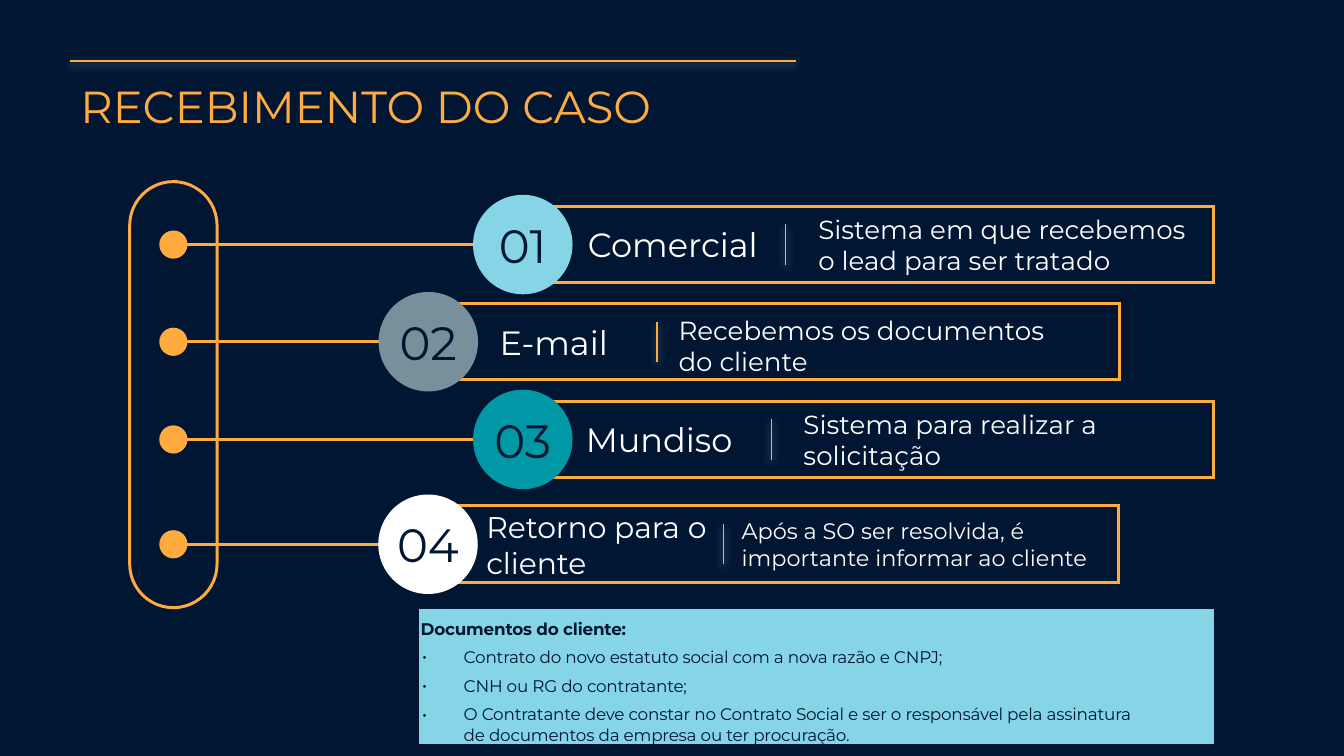
"""Build the case intake slide: four numbered steps and a list of client documents."""
from lxml import etree
from pptx import Presentation
from pptx import util as u
from pptx.dml.color import RGBColor as Rgb
from pptx.enum import shapes, text
from pptx.oxml import ns

theme = {
    "font": "Montserrat",
    "navy": "001633", "gold": "FFAB40", "white": "FFFFFF", "black": "000000",
    "sky": "85D5E6", "slate": "78909C", "teal": "0097A7",
    "head": 24, "num": 25, "list": 9, "bold": 1.6, "thin": 0.75,
}
cell = u.Inches(0.1)
kinds = shapes.MSO_SHAPE
mid, top = text.MSO_ANCHOR.MIDDLE, text.MSO_ANCHOR.TOP

deck = Presentation()
deck.slide_width = u.Inches(10)
deck.slide_height = deck.slide_width * 9 // 16
slide = deck.slides.add_slide(deck.slide_layouts[6])
slide.background.fill.solid()
slide.background.fill.fore_color.rgb = Rgb.from_string(theme["navy"])


def form(kind, box, fill=None, edge=None, words="", size=12, ink="white", anchor=mid):
    area = [int(n * cell) for n in box]
    if kind is None:
        item = slide.shapes.add_textbox(*area)
    else:
        item = slide.shapes.add_shape(kind, *area)
        item.shadow.inherit = False
        if fill:
            item.fill.solid()
            item.fill.fore_color.rgb = Rgb.from_string(theme[fill])
        else:
            item.fill.background()
        if edge:
            item.line.color.rgb = Rgb.from_string(theme[edge])
            item.line.width = u.Pt(theme["thin" if fill else "bold"])
            etree.SubElement(item.line._get_or_add_ln(), ns.qn("a:miter"), lim="800000")
        else:
            item.line.fill.background()
    if words:
        frame = item.text_frame
        frame.word_wrap, frame.vertical_anchor = kind is None, anchor
        frame.margin_left = frame.margin_right = cell
        frame.margin_top = frame.margin_bottom = cell
        para = frame.paragraphs[0]
        para.text = words
        para.alignment = text.PP_ALIGN.CENTER if kind else text.PP_ALIGN.LEFT
        para.font.name, para.font.size = theme["font"], u.Pt(size)
        para.font.color.rgb = Rgb.from_string(theme[ink])
    return item


def wire(ends, width, glow=False):
    line = slide.shapes.add_connector(
        shapes.MSO_CONNECTOR.STRAIGHT, *[int(n * cell) for n in ends])
    line.line.color.rgb = Rgb.from_string(theme["gold"])
    line.line.width = u.Pt(theme[width])
    effects = etree.SubElement(line._element.spPr, ns.qn("a:effectLst"))
    if glow:
        cast = etree.SubElement(effects, ns.qn("a:outerShdw"), blurRad="57150",
                                dist="19050", dir="5400000", algn="bl", rotWithShape="0")
        tint = etree.SubElement(cast, ns.qn("a:srgbClr"), val=theme["white"])
        etree.SubElement(tint, ns.qn("a:alpha"), val="50000")


wire((5.2, 4.53, 59.2, 4.53), "thin", True)
form(None, (5, 4.85, 87.5, 5.2), words="RECEBIMENTO DO CASO",
     size=theme["head"], ink="gold", anchor=top)
rail = form(kinds.ROUNDED_RECTANGLE, (9.65, 13.52, 6.5, 31.7), edge="gold")
rail.adjustments[0] = 0.5

axis, dot, disc, bar, tall = 12.9, 2.1, 7.4, 51.4, 5.7
steps = [
    ("01", "sky", 38.9, 18.2, "Comercial", 42.75, 16.2, 18, 58.45,
     "Sistema em que recebemos o lead para ser tratado", 59.9, 29.5, 14, 0),
    ("02", "slate", 31.87, 25.43, "E-mail", 36.2, 12, 18, 48.9,
     "Recebemos os documentos do cliente", 49.5, 31.9, 14, 0.27),
    ("03", "teal", 38.9, 32.7, "Mundiso", 42.6, 16.2, 18, 57.4,
     "Sistema para realizar a solicitação", 58.8, 31.9, 14, 0),
    ("04", "white", 31.85, 40.5, "Retorno para o cliente", 35.2, 18.7, 16, 53.85,
     "Após a SO ser resolvida, é importante informar ao cliente", 54.2, 28.6, 12, 0),
]
for num, hue, hub, row, name, left, wide, size, cut, note, start, span, small, drop in steps:
    form(kinds.RECTANGLE, (hub, row - tall / 2, bar, tall), edge="gold")
    form(kinds.OVAL, (axis - dot / 2, row - dot / 2, dot, dot), fill="gold")
    wire((axis, row, hub, row), "bold")
    form(kinds.OVAL, (hub - disc / 2, row - disc / 2, disc, disc), fill=hue,
         words=num, size=theme["num"], ink="navy")
    form(None, (left, row - 3, wide, 6), words=name, size=size)
    form(None, (start, row - 3 + drop, span, 6), words=note, size=small)
    wire((cut, row - 1.5, cut, row + 1.5), "thin", True)

docs = [
    "Documentos do cliente:",
    "Contrato do novo estatuto social com a nova razão e CNPJ;",
    "CNH ou RG do contratante;",
    "O Contratante~deve~constar no Contrato Social~e~ser o responsável pela assinatura "
    "de~documentos da~empresa ou~ter~procuração.~",
]
panel = form(kinds.RECTANGLE, (31.2, 45.4, 59.1, 9.9), fill="sky", edge="sky")
frame = panel.text_frame
frame.word_wrap, frame.vertical_anchor = True, top
frame.margin_left = frame.margin_right = frame.margin_bottom = 0
frame.margin_top = u.Inches(0.06)
for rank, words in enumerate(docs):
    para = frame.paragraphs[0] if rank == 0 else frame.add_paragraph()
    para.text, para.alignment = words.replace("~", chr(160)), text.PP_ALIGN.LEFT
    para.runs[0].font._element.set("spc", "-10")
    prop = para._p.get_or_add_pPr()
    prop.set("marL", str(u.Inches(0.33 if rank else 0.01)))
    if rank:
        prop.set("indent", str(u.Inches(-0.31)))
        tint = etree.SubElement(prop, ns.qn("a:buClr"))
        etree.SubElement(tint, ns.qn("a:srgbClr"), val=theme["black"])
        etree.SubElement(prop, ns.qn("a:buFont"), typeface=theme["font"])
        etree.SubElement(prop, ns.qn("a:buChar"), char="•")
        para.space_before = u.Pt(4.5)
    para.font.name, para.font.size = theme["font"], u.Pt(theme["list"])
    para.font.bold = rank == 0
    para.font.color.rgb = Rgb.from_string(theme["navy"])

deck.save("out.pptx")
